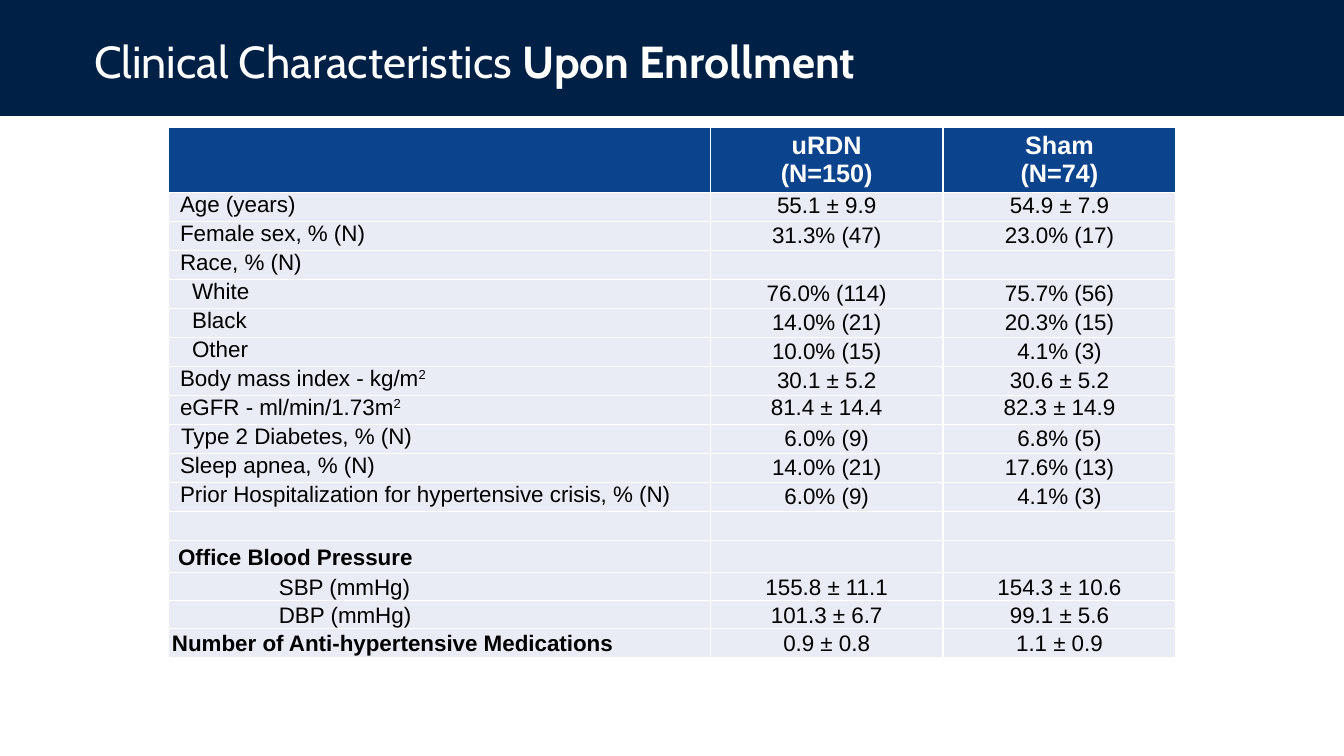
import dataclasses

import lxml.etree
import pptx
import pptx.dml.color
import pptx.enum.shapes
import pptx.enum.text
import pptx.oxml
import pptx.oxml.ns
import pptx.util

ALIGN = pptx.enum.text.PP_ALIGN
ANCHOR = pptx.enum.text.MSO_ANCHOR


@dataclasses.dataclass(frozen=True)
class Theme:
    navy: str = "002045"
    blue: str = "0B438C"
    pale: str = "E9EBF5"
    white: str = "FFFFFF"
    black: str = "000000"
    title_font: str = "Cabin"
    body_font: str = "Arial"
    title_size: int = 32
    header_size: int = 18
    body_size: int = 16
    rule_width: int = 1


@dataclasses.dataclass(frozen=True)
class Row:
    label: str
    values: tuple = ("", "")
    power: str = ""
    inset: float = 0.12
    indent: float = 0
    bold: bool = False
    middle: bool = False
    label_spacing: float = 1
    value_spacing: float = 1.07
    height: float = 0.29


THEME = Theme()
SLIDE_WIDTH, SLIDE_HEIGHT = 13.33, 7.5
HEADINGS = ("uRDN", "(N=150)"), ("Sham", "(N=74)")
HEADER_HEIGHT = 0.65
COLUMN_SHARES = 0.538, 0.231, 0.231
SUMMARY = {"middle": True, "label_spacing": 1.07}
ROWS = [
    Row("Age (years)", ("55.1 ± 9.9", "54.9 ± 7.9")),
    Row("Female sex, % (N)", ("31.3% (47)", "23.0% (17)")),
    Row("Race, % (N)"),
    Row("White", ("76.0% (114)", "75.7% (56)"), indent=0.12),
    Row("Black", ("14.0% (21)", "20.3% (15)"), indent=0.12),
    Row("Other", ("10.0% (15)", "4.1% (3)"), indent=0.12),
    Row("Body mass index - kg/m", ("30.1 ± 5.2", "30.6 ± 5.2"), power="2"),
    Row("eGFR - ml/min/1.73m", ("81.4 ± 14.4", "82.3 ± 14.9"), power="2", value_spacing=1),
    Row("Type 2 Diabetes, % (N)", ("6.0% (9)", "6.8% (5)"), indent=0.01),
    Row("Sleep apnea, % (N)", ("14.0% (21)", "17.6% (13)")),
    Row("Prior Hospitalization for hypertensive crisis, % (N)", ("6.0% (9)", "4.1% (3)")),
    Row(""),
    Row("Office Blood Pressure", inset=0.1, bold=True, height=0.32, **SUMMARY),
    Row("SBP (mmHg)", ("155.8 ± 11.1", "154.3 ± 10.6"), inset=0.1, indent=1, height=0.28, **SUMMARY),
    Row("DBP (mmHg)", ("101.3 ± 6.7", "99.1 ± 5.6"), inset=0.1, indent=1, height=0.28, **SUMMARY),
    Row("Number of Anti-hypertensive Medications", ("0.9 ± 0.8", "1.1 ± 0.9"),
        inset=0.04, bold=True, **SUMMARY),
]


def inches(box):
    return [pptx.util.Inches(length) for length in box]


def color(value):
    return pptx.dml.color.RGBColor.from_string(value)


def add_span(para, text, font, size, ink, bold=False):
    span = para.add_run()
    span.text = text
    span.font.name = font
    span.font.size = pptx.util.Pt(size)
    span.font.color.rgb = color(ink)
    span.font.bold = bold
    return span


def add_heading(page, box):
    left, top, width, height = box
    band = page.shapes.add_shape(pptx.enum.shapes.MSO_SHAPE.RECTANGLE, *inches(box))
    band.shadow.inherit = False
    band.fill.solid()
    band.fill.fore_color.rgb = color(THEME.navy)
    band.line.fill.background()

    title = page.shapes.title
    band._element.addnext(title._element)
    title.left, title.top, title.width, title.height = inches(
        (left + width / 16, top + 0.12, width * 0.8625, height - 0.12))
    frame = title.text_frame
    frame.word_wrap = True
    frame.auto_size = pptx.enum.text.MSO_AUTO_SIZE.NONE
    frame.vertical_anchor = ANCHOR.MIDDLE
    para = frame.paragraphs[0]
    para.alignment = ALIGN.LEFT
    para.line_spacing = 0.9
    for text, bold in (("Clinical Characteristics ", False), ("Upon Enrollment", True)):
        add_span(para, text, THEME.title_font, THEME.title_size, THEME.white, bold)


def style_cell(cell, fill, inset, middle):
    properties = cell._tc.get_or_add_tcPr()
    for side in "LRTB":
        edge = lxml.etree.SubElement(
            properties, pptx.oxml.ns.qn(f"a:ln{side}"), w=str(pptx.util.Pt(THEME.rule_width)))
        paint = lxml.etree.SubElement(edge, pptx.oxml.ns.qn("a:solidFill"))
        lxml.etree.SubElement(paint, pptx.oxml.ns.qn("a:srgbClr"), val=THEME.white)
    cell.fill.solid()
    cell.fill.fore_color.rgb = color(fill)
    cell.margin_left, cell.margin_right = inches((inset, min(inset, 0.04)))
    cell.margin_top = cell.margin_bottom = 0
    cell.vertical_anchor = ANCHOR.MIDDLE if middle else ANCHOR.TOP


def fill_cell(cell, text, alignment, spacing, bold=False):
    para = cell.text_frame.paragraphs[0]
    para.alignment = alignment
    para.line_spacing = spacing
    if text:
        add_span(para, text, THEME.body_font, THEME.body_size, THEME.black, bold)
    else:
        lxml.etree.SubElement(
            para._p, pptx.oxml.ns.qn("a:endParaRPr"), sz=str(THEME.body_size * 100))
    return para


def fill_header(cells):
    for cell, lines in zip(cells, ((),) + HEADINGS):
        style_cell(cell, THEME.blue, 0.02, True)
        para = cell.text_frame.paragraphs[0]
        para.alignment = ALIGN.CENTER
        for index, line in enumerate(lines):
            if index:
                para.add_line_break()
            add_span(para, line, THEME.body_font, THEME.header_size, THEME.white, True)


def fill_row(cells, row):
    label, *values = cells
    style_cell(label, THEME.pale, row.inset, row.middle)
    para = fill_cell(label, row.label, ALIGN.LEFT, row.label_spacing, row.bold)
    if row.indent:
        para._p.get_or_add_pPr().set("marL", str(pptx.util.Inches(row.indent)))
    if row.power:
        span = add_span(para, row.power, THEME.body_font, THEME.body_size, THEME.black)
        span._r.get_or_add_rPr().set("baseline", "30000")
    for cell, text in zip(values, row.values):
        style_cell(cell, THEME.pale, 0.04, row.middle)
        fill_cell(cell, text, ALIGN.CENTER, row.value_spacing)


def add_characteristics(page, box):
    width, height = box[2:]
    heights = [HEADER_HEIGHT] + [row.height for row in ROWS]
    table = page.shapes.add_table(len(heights), len(COLUMN_SHARES), *inches(box)).table
    table.first_row = True
    table.horz_banding = False
    for column, share in zip(table.columns, COLUMN_SHARES):
        column.width = pptx.util.Inches(width * share)
    for line, weight in zip(table.rows, heights):
        line.height = pptx.util.Inches(height * weight / sum(heights))
    header, *lines = table.rows
    fill_header(header.cells)
    for line, row in zip(lines, ROWS):
        fill_row(line.cells, row)


def main():
    deck = pptx.Presentation()
    deck.slide_width, deck.slide_height = inches((SLIDE_WIDTH, SLIDE_HEIGHT))
    page = deck.slides.add_slide(deck.slide_layouts.get_by_name("Title Only"))
    add_heading(page, (0, 0, SLIDE_WIDTH, 1.15))
    add_characteristics(page, (SLIDE_WIDTH / 8, 1.26, SLIDE_WIDTH * 0.75, 5.27))
    deck.save("out.pptx")


if __name__ == "__main__":
    main()
